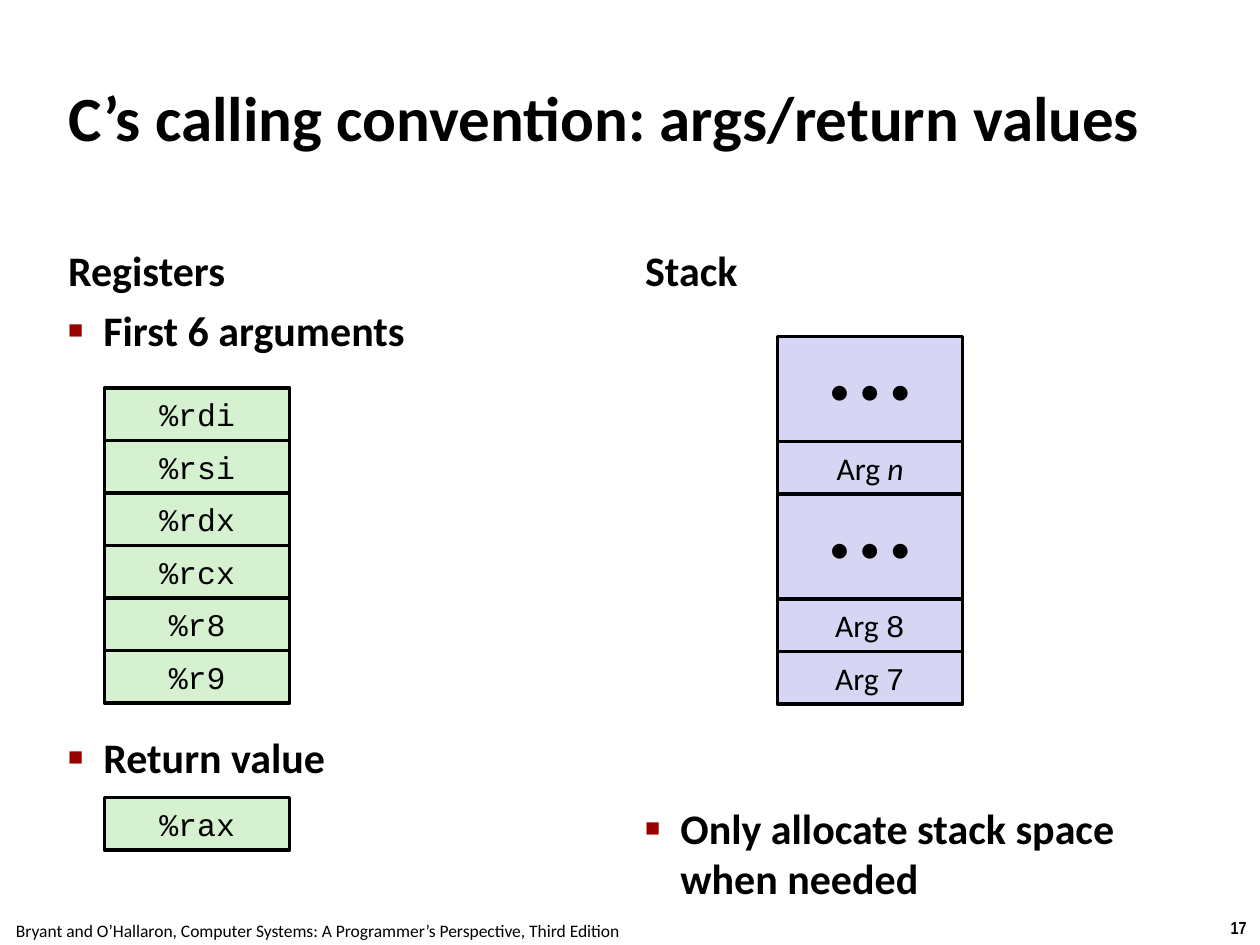
from dataclasses import dataclass

import lxml.etree
import pptx
import pptx.dml.color
import pptx.enum.shapes
import pptx.enum.text
import pptx.oxml.ns
import pptx.util

Inches = pptx.util.Inches
Pt = pptx.util.Pt
Anchor = pptx.enum.text.MSO_ANCHOR
Align = pptx.enum.text.PP_ALIGN


@dataclass(frozen=True)
class Theme:
    ink: str = "000000"
    bullet: str = "990000"
    register: str = "D5F1CF"
    stack: str = "D6D6F4"
    body_font: str = "Calibri"
    code_font: str = "Courier New"
    number_font: str = "Arial Narrow"
    title_size: int = 36
    body_size: int = 24
    cell_size: int = 18
    footer_size: int = 10


THEME = Theme()
ROW_HEIGHT = Inches(1.25) // 3
CELL_WIDTH = Inches(1.47)
INSET = Inches(0.04)


@dataclass(frozen=True)
class Span:
    text: str
    size: int = THEME.cell_size
    font: str = THEME.body_font
    bold: bool = False
    italic: bool = False


@dataclass(frozen=True)
class Line:
    text: str
    bulleted: bool = True
    space_before: int = 6


@dataclass(frozen=True)
class TextBlock:
    left: float
    top: float
    height: float
    lines: tuple[Line, ...]
    anchor: Anchor = Anchor.TOP


@dataclass(frozen=True)
class Footer:
    left: float
    top: float
    width: float
    span: Span


@dataclass(frozen=True)
class Cell:
    spans: tuple[Span, ...]
    rows: int = 1
    inset: int = INSET


def color(value: str) -> pptx.dml.color.RGBColor:
    return pptx.dml.color.RGBColor.from_string(value)


def add_span(paragraph, span: Span) -> None:
    run = paragraph.add_run()
    run.text = span.text
    run.font.name = span.font
    run.font.size = Pt(span.size)
    run.font.bold = span.bold
    run.font.italic = span.italic
    run.font.color.rgb = color(THEME.ink)


def set_frame(frame, anchor: Anchor, inset: int) -> None:
    frame.word_wrap = True
    frame.vertical_anchor = anchor
    frame.margin_left = frame.margin_right = inset
    frame.margin_top = frame.margin_bottom = inset


def set_hanging_indent(paragraph, indent: float) -> None:
    properties = paragraph._p.get_or_add_pPr()
    properties.set("marL", str(Inches(indent)))
    properties.set("indent", str(-Inches(indent)))


def add_bullet(paragraph) -> None:
    set_hanging_indent(paragraph, 0.28)
    properties = paragraph._p.get_or_add_pPr()
    qn = pptx.oxml.ns.qn
    bullet_color = lxml.etree.SubElement(properties, qn("a:buClr"))
    lxml.etree.SubElement(bullet_color, qn("a:srgbClr"), val=THEME.bullet)
    lxml.etree.SubElement(properties, qn("a:buSzPct"), val="60000")
    lxml.etree.SubElement(properties, qn("a:buFont"), typeface="Arial")
    lxml.etree.SubElement(properties, qn("a:buChar"), char="■")


def fill_title(title, text: str) -> None:
    title.left, title.top = Inches(0.5), Inches(0.3)
    title.width, title.height = Inches(9), Inches(1.25)
    set_frame(title.text_frame, Anchor.MIDDLE, INSET)
    paragraph = title.text_frame.paragraphs[0]
    paragraph.alignment = Align.LEFT
    set_hanging_indent(paragraph, 0.13)
    add_span(paragraph, Span(text, THEME.title_size, bold=True))


def add_text_block(shapes, block: TextBlock) -> None:
    frame = shapes.add_textbox(
        Inches(block.left), Inches(block.top), Inches(4.42), Inches(block.height)
    ).text_frame
    set_frame(frame, block.anchor, INSET)
    for index, line in enumerate(block.lines):
        paragraph = frame.add_paragraph() if index else frame.paragraphs[0]
        paragraph.space_before = Pt(line.space_before)
        if line.bulleted:
            add_bullet(paragraph)
        add_span(paragraph, Span(line.text, THEME.body_size, bold=True))


def add_footer(shapes, footer: Footer) -> None:
    frame = shapes.add_textbox(
        Inches(footer.left), Inches(footer.top), Inches(footer.width), Inches(0.27)
    ).text_frame
    frame.word_wrap = False
    paragraph = frame.paragraphs[0]
    paragraph.alignment = Align.CENTER
    add_span(paragraph, footer.span)


def add_cells(shapes, left: float, top: float, fill: str, cells: list[Cell]) -> None:
    cell_top = Inches(top)
    for cell in cells:
        height = cell.rows * ROW_HEIGHT
        box = shapes.add_shape(
            pptx.enum.shapes.MSO_SHAPE.RECTANGLE, Inches(left), cell_top, CELL_WIDTH, height
        )
        box.shadow.inherit = False
        box.fill.solid()
        box.fill.fore_color.rgb = color(fill)
        box.line.color.rgb = color(THEME.ink)
        box.line.width = Pt(2)
        set_frame(box.text_frame, Anchor.MIDDLE, cell.inset)
        paragraph = box.text_frame.paragraphs[0]
        paragraph.alignment = Align.CENTER
        for span in cell.spans:
            add_span(paragraph, span)
        cell_top += height


def code(text: str) -> Span:
    return Span(text, font=THEME.code_font)


def main() -> None:
    presentation = pptx.Presentation()
    presentation.slide_width, presentation.slide_height = Inches(10), Inches(7.5)
    slide = presentation.slides.add_slide(presentation.slide_layouts[5])
    shapes = slide.shapes
    fill_title(shapes.title, "C’s calling convention: args/return values")

    credit = "Bryant and O’Hallaron, Computer Systems: A Programmer’s Perspective, Third Edition"
    page_number = Span("17", THEME.footer_size, THEME.number_font, bold=True)
    add_footer(shapes, Footer(9.66, 7.23, 0.34, page_number))
    add_footer(shapes, Footer(-0.02, 7.25, 5.08, Span(credit, THEME.footer_size)))

    register_notes = (Line("First 6 arguments"), Line("Return value", space_before=215))
    stack_notes = (Line("Only allocate stack space when needed"),)
    for block in (
        TextBlock(0.5, 1.68, 0.7, (Line("Registers", bulleted=False),), Anchor.BOTTOM),
        TextBlock(0.5, 2.38, 4.32, register_notes),
        TextBlock(5.08, 1.68, 0.7, (Line("Stack", bulleted=False),), Anchor.BOTTOM),
        TextBlock(5.08, 6.33, 0.37, stack_notes),
    ):
        add_text_block(shapes, block)

    argument_registers = ("%rdi", "%rsi", "%rdx", "%rcx", "%r8", "%r9")
    argument_cells = [Cell((code(name),)) for name in argument_registers]
    add_cells(shapes, 0.83, 3.08, THEME.register, argument_cells)
    add_cells(shapes, 0.83, 6.33, THEME.register, [Cell((code("%rax"),))])

    argument = Span("Arg ")
    ellipsis = Cell((Span("• • •", THEME.body_size),), rows=2, inset=0)
    stack_cells = [
        ellipsis,
        Cell((argument, Span("n", italic=True))),
        ellipsis,
        Cell((argument, code("8"))),
        Cell((argument, code("7"))),
    ]
    add_cells(shapes.add_group_shape().shapes, 6.17, 2.67, THEME.stack, stack_cells)

    presentation.save("out.pptx")


if __name__ == "__main__":
    main()
